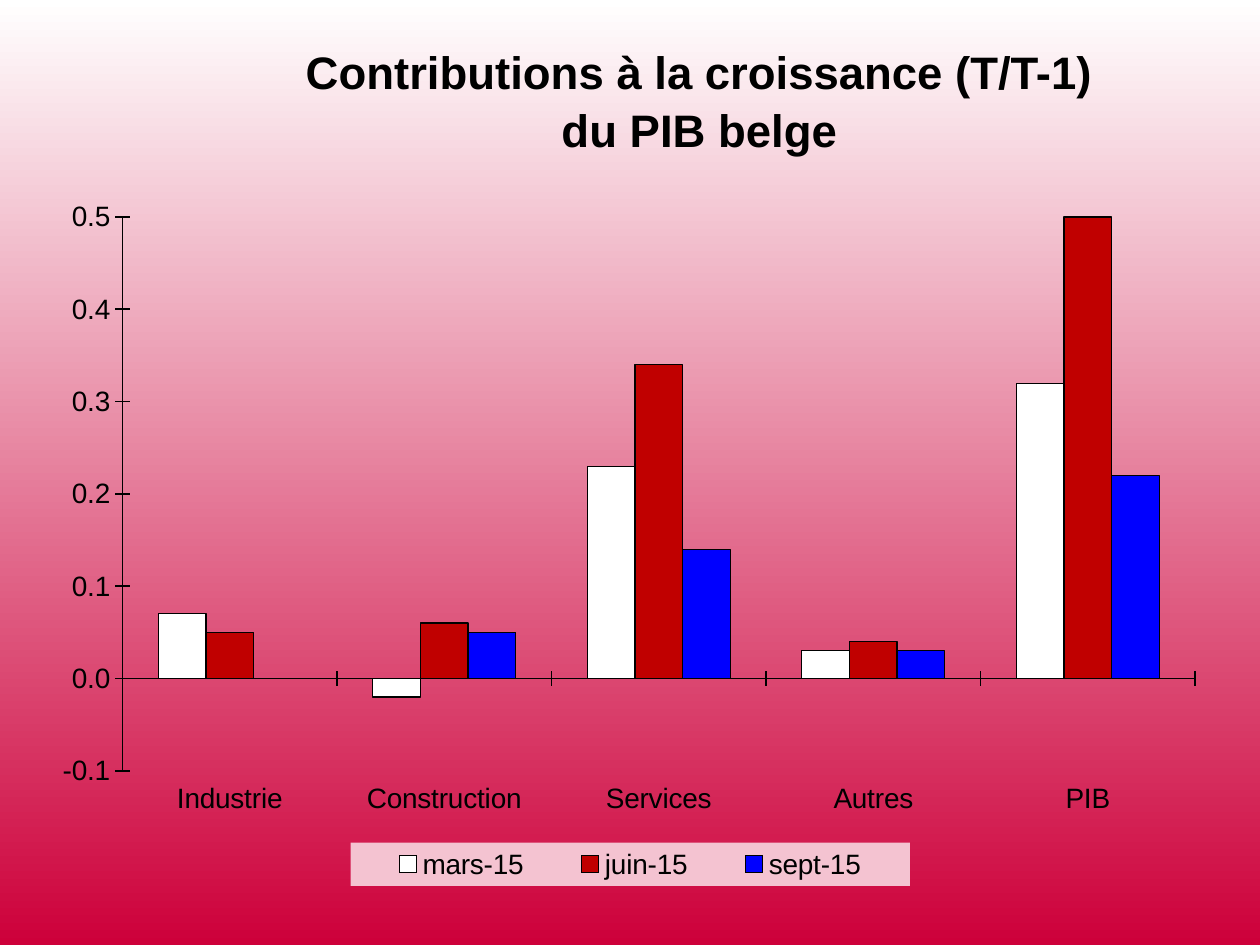
"""Build the slide on contributions to Belgian GDP growth."""
from lxml import etree
from pptx import Presentation
from pptx.chart.data import CategoryChartData
from pptx.dml.color import RGBColor
from pptx.enum.chart import XL_CHART_TYPE, XL_LEGEND_POSITION, XL_TICK_LABEL_POSITION, XL_TICK_MARK
from pptx.enum.text import MSO_ANCHOR, PP_ALIGN
from pptx.oxml.ns import qn
from pptx.util import Emu, Pt

COLUMNS = XL_CHART_TYPE.COLUMN_CLUSTERED
BOTTOM = XL_LEGEND_POSITION.BOTTOM
LOW = XL_TICK_LABEL_POSITION.LOW
CROSS, NO_TICK = XL_TICK_MARK.CROSS, XL_TICK_MARK.NONE
MIDDLE, CENTER = MSO_ANCHOR.MIDDLE, PP_ALIGN.CENTER

TITLE = "Contributions à la croissance (T/T-1) du PIB belge"
CATEGORIES = ["Industrie", "Construction", "Services", "Autres", "PIB"]
SERIES = [
    ("mars-15", "FFFFFF", [0.07, -0.02, 0.23, 0.03, 0.32]),
    ("juin-15", "C00000", [0.05, 0.06, 0.34, 0.04, 0.5]),
    ("sept-15", "0000FF", [0, 0.05, 0.14, 0.03, 0.22]),
]
BACKGROUND = ["FFFFFF", "CD003A"]
BLACK, LEGEND_FILL = "000000", "F4C3D1"
FONT = "Arial"
TITLE_BOX = (273, 44, 853, 110)
CHART_BOX = (54, 174, 1142, 719)
PLOT_LAYOUT = {"x": 0.06, "y": 0.06, "w": 0.94, "h": 0.77}
LEGEND_LAYOUT = {"x": 0.26, "y": 0.93, "w": 0.49, "h": 0.06}


def px(length):
    return Emu(round(length * 914400 / 126))


def color(value):
    return RGBColor.from_string(value)


def style_font(font, size, bold=False):
    font.name, font.size, font.bold = FONT, Pt(size), bold
    font.color.rgb = color(BLACK)


def style_line(line, width):
    line.color.rgb = color(BLACK)
    line.width = Pt(width)


def chart_element(tag, value=None):
    element = etree.Element(qn(f"c:{tag}"))
    if value is not None:
        element.set("val", str(value))
    return element


def make_layout(fractions, inner=False):
    layout = chart_element("layout")
    manual = chart_element("manualLayout")
    layout.append(manual)
    if inner:
        manual.append(chart_element("layoutTarget", "inner"))
    for key in "xy":
        manual.append(chart_element(f"{key}Mode", "edge"))
    for key, value in fractions.items():
        manual.append(chart_element(key, value))
    return layout


def add_title(slide):
    title = slide.shapes.title
    title.left, title.top, title.width, title.height = map(px, TITLE_BOX)
    frame = title.text_frame
    frame.word_wrap = True
    frame.vertical_anchor = MIDDLE
    paragraph = frame.paragraphs[0]
    paragraph.alignment = CENTER
    paragraph.line_spacing = 1.05
    run = paragraph.add_run()
    run.text = TITLE
    style_font(run.font, 26, bold=True)


def style_axes(chart):
    for axis in (chart.category_axis, chart.value_axis):
        axis.has_major_gridlines = False
        axis.major_tick_mark, axis.minor_tick_mark = CROSS, NO_TICK
        style_line(axis.format.line, 1)
    chart.category_axis.tick_label_position = LOW
    values = chart.value_axis
    values.minimum_scale, values.maximum_scale, values.major_unit = -0.1, 0.5, 0.1
    values.tick_labels.number_format = "0.0"
    values.tick_labels.number_format_is_linked = False


def style_legend(chart):
    chart.has_legend = True
    legend = chart.legend
    legend.position = BOTTOM
    legend.include_in_layout = False
    style_font(legend.font, 16)
    element = legend.font._element if hasattr(legend.font, "_element") else None
    element = chart._chartSpace.find(f".//{qn('c:legend')}")
    for old in element.findall(qn("c:layout")):
        element.remove(old)
    element.find(qn("c:legendPos")).addnext(make_layout(LEGEND_LAYOUT))
    properties = chart_element("spPr")
    fill = etree.SubElement(properties, qn("a:solidFill"))
    etree.SubElement(fill, qn("a:srgbClr"), val=LEGEND_FILL)
    element.find(qn("c:overlay")).addnext(properties)


def add_chart(slide):
    data = CategoryChartData()
    data.categories = CATEGORIES
    for name, _, values in SERIES:
        data.add_series(name, values)
    chart = slide.shapes.add_chart(COLUMNS, *map(px, CHART_BOX), data).chart
    chart.has_title = False
    style_font(chart.font, 16)
    plot = chart.plots[0]
    plot.gap_width, plot.overlap, plot.vary_by_categories = 150, 0, False
    for series, (_, fill, _) in zip(plot.series, SERIES):
        series.invert_if_negative = False
        series.format.fill.solid()
        series.format.fill.fore_color.rgb = color(fill)
        style_line(series.format.line, 0.75)
    style_axes(chart)
    style_legend(chart)
    plot_area = chart._chartSpace.find(f".//{qn('c:plotArea')}")
    for old in plot_area.findall(qn("c:layout")):
        plot_area.remove(old)
    plot_area.insert(0, make_layout(PLOT_LAYOUT, inner=True))


def main():
    presentation = Presentation()
    presentation.slide_width, presentation.slide_height = px(1260), px(945)
    slide = presentation.slides.add_slide(presentation.slide_layouts[5])
    fill = slide.background.fill
    fill.gradient()
    fill.gradient_angle = 270
    for stop, value in zip(fill.gradient_stops, BACKGROUND):
        stop.color.rgb = color(value)
    add_title(slide)
    add_chart(slide)
    presentation.save("out.pptx")


if __name__ == "__main__":
    main()
